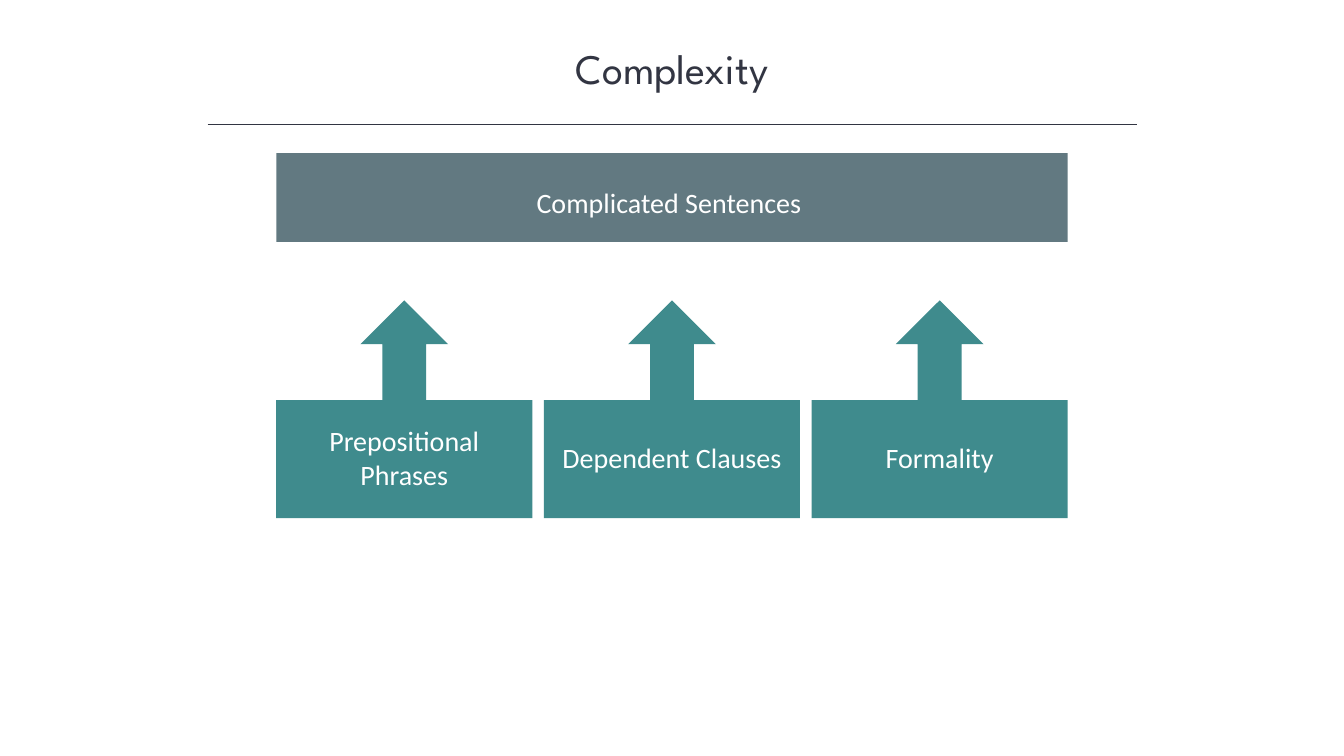
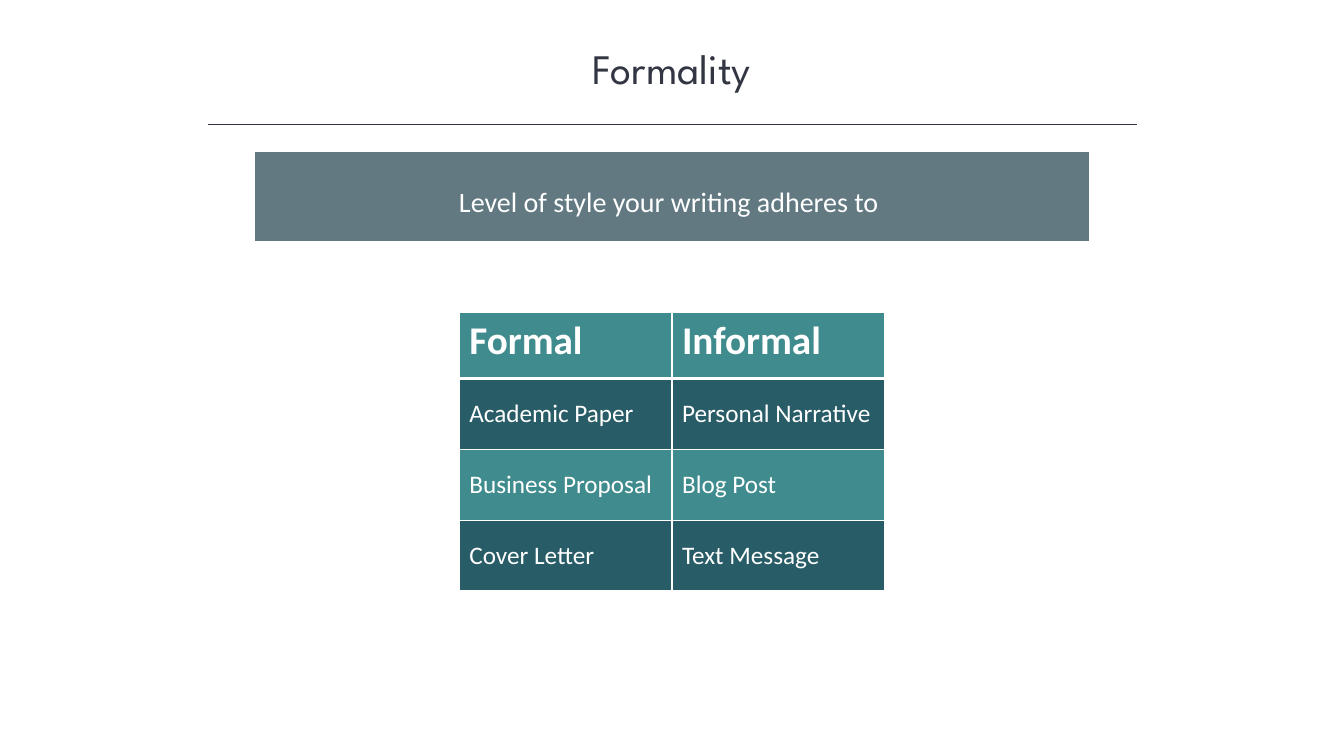
import lxml.etree
import pptx
import pptx.dml.color
import pptx.enum.shapes
import pptx.enum.text
import pptx.oxml.ns
import pptx.util

Inches = pptx.util.Inches
SHAPES = pptx.enum.shapes.MSO_SHAPE
MIDDLE = pptx.enum.text.MSO_ANCHOR.MIDDLE
CENTER = pptx.enum.text.PP_ALIGN.CENTER

SLIDE_WIDTH = 13.33
INK = "323542"
WHITE = "FFFFFF"
SLATE = "627981"
TEAL = "3F8B8D"
DARK_TEAL = "285C66"
TITLE_FONT = "League Spartan"
BODY_FONT = "Calibri"


def color(hex_value):
    """Turn a hex string into a colour."""
    return pptx.dml.color.RGBColor.from_string(hex_value)


def set_margins(target, left, top, right, bottom):
    """Set the inner margins of a text frame or table cell."""
    target.margin_left = Inches(left)
    target.margin_top = Inches(top)
    target.margin_right = Inches(right)
    target.margin_bottom = Inches(bottom)


def write(text_frame, text, size, font=BODY_FONT, hex_value=WHITE, bold=False, align=CENTER):
    """Fill a text frame with one formatted paragraph."""
    text_frame.text = text
    text_frame.word_wrap = True
    paragraph = text_frame.paragraphs[0]
    paragraph.alignment = align
    for run in paragraph.runs:
        run.font.name = font
        run.font.size = pptx.util.Pt(size)
        run.font.bold = bold
        run.font.color.rgb = color(hex_value)


def add_filled_shape(slide, preset, left, top, width, height, fill):
    """Add a preset shape with a flat fill and no outline."""
    shape = slide.shapes.add_shape(
        preset, Inches(left), Inches(top), Inches(width), Inches(height))
    shape.shadow.inherit = False
    shape.fill.solid()
    shape.fill.fore_color.rgb = color(fill)
    shape.line.fill.background()
    return shape


def add_label_box(slide, left, top, width, height, fill, text, margins):
    """Add a filled rectangle with a centred label."""
    shape = add_filled_shape(slide, SHAPES.RECTANGLE, left, top, width, height, fill)
    write(shape.text_frame, text, 20)
    shape.text_frame.vertical_anchor = MIDDLE
    set_margins(shape.text_frame, *margins)


def add_titled_slide(presentation, title_text):
    """Add a slide with a centred title above a thin rule."""
    slide = presentation.slides.add_slide(presentation.slide_layouts[5])
    title = slide.shapes.title
    title.left, title.top = Inches((SLIDE_WIDTH - 10) / 2), Inches(0.37)
    title.width, title.height = Inches(10), Inches(0.61)
    write(title.text_frame, title_text, 30, TITLE_FONT, INK)
    title.text_frame.vertical_anchor = pptx.enum.text.MSO_ANCHOR.TOP
    set_margins(title.text_frame, 0.1, 0.05, 0.1, 0.05)
    rule = slide.shapes.add_connector(
        pptx.enum.shapes.MSO_CONNECTOR.STRAIGHT,
        Inches(2.06), Inches(1.24), Inches(11.28), Inches(1.24))
    rule.line.color.rgb = color(INK)
    rule.line.width = pptx.util.Pt(0.75)
    lxml.etree.SubElement(rule._element.spPr, pptx.oxml.ns.qn("a:effectLst"))
    return slide


def add_banner(slide, top, width, text):
    """Add the slate band centred under the title."""
    left = (SLIDE_WIDTH - width) / 2
    add_label_box(slide, left, top, width, 0.88, SLATE, text, (0.1, 0.1, 0.16, 0))


def add_arrow_cards(slide, left, top, width, labels):
    """Add a row of cards, each with an arrow rising from its top."""
    card_width, card_height = 2.54, 1.17
    arrow_width, arrow_height = 0.87, 1.14
    card_top = top + 0.99
    pitch = (width - card_width) / (len(labels) - 1)
    for index, label in enumerate(labels):
        card_left = left + index * pitch
        add_filled_shape(
            slide, SHAPES.UP_ARROW, card_left + (card_width - arrow_width) / 2, top,
            arrow_width, arrow_height, TEAL)
        add_label_box(
            slide, card_left, card_top, card_width, card_height, TEAL, label,
            (0.13, 0.05, 0.13, 0.08))


def set_cell_borders(cell, hex_value, points):
    """Draw a solid line on all four sides of a table cell."""
    properties = cell._tc.get_or_add_tcPr()
    for index, side in enumerate(("a:lnL", "a:lnR", "a:lnT", "a:lnB")):
        line = lxml.etree.Element(pptx.oxml.ns.qn(side), w=str(pptx.util.Pt(points)))
        fill = lxml.etree.SubElement(line, pptx.oxml.ns.qn("a:solidFill"))
        lxml.etree.SubElement(fill, pptx.oxml.ns.qn("a:srgbClr"), val=hex_value)
        properties.insert(index, line)


def add_tile(slide, left, top, width, height, text, fill, is_header):
    """Add a table of one cell, so that each tile can be moved alone."""
    table = slide.shapes.add_table(
        1, 1, Inches(left), Inches(top), Inches(width), Inches(height)).table
    table.horz_banding = False
    cell = table.cell(0, 0)
    write(cell.text_frame, text, 28 if is_header else 18, bold=is_header,
          align=pptx.enum.text.PP_ALIGN.LEFT)
    if not is_header:
        cell.vertical_anchor = MIDDLE
    set_margins(cell, 0.1, 0.05, 0.1, 0.05)
    cell.fill.solid()
    cell.fill.fore_color.rgb = color(fill)
    set_cell_borders(cell, WHITE, 1)


def add_comparison_tiles(slide, left, top, width, rows):
    """Add a grid of tiles with bold headers and alternating fills."""
    header_height, row_height = 0.65, 0.7
    first_row_top = top + header_height + 0.01
    tile_width = width / len(rows[0])
    for row_index, texts in enumerate(rows):
        is_header = row_index == 0
        tile_top = top if is_header else first_row_top + (row_index - 1) * row_height
        for column_index, text in enumerate(texts):
            add_tile(
                slide, left + column_index * tile_width, tile_top, tile_width,
                header_height if is_header else row_height, text,
                DARK_TEAL if row_index % 2 else TEAL, is_header)


def build_complexity_slide(presentation):
    """Build the slide on what makes sentences complicated."""
    slide = add_titled_slide(presentation, "Complexity")
    width = 7.85
    add_banner(slide, 1.52, width, "Complicated Sentences")
    add_arrow_cards(
        slide, (SLIDE_WIDTH - width) / 2, 2.98, width,
        ("Prepositional Phrases", "Dependent Clauses", "Formality"))


def build_formality_slide(presentation):
    """Build the slide that compares formal and informal writing."""
    slide = add_titled_slide(presentation, "Formality")
    add_banner(slide, 1.51, 8.27, "Level of style your writing adheres to")
    width = 4.22
    add_comparison_tiles(slide, (SLIDE_WIDTH - width) / 2, 3.1, width, (
        ("Formal", "Informal"),
        ("Academic Paper", "Personal Narrative"),
        ("Business Proposal", "Blog Post"),
        ("Cover Letter", "Text Message"),
    ))


def main():
    """Build and save the presentation."""
    presentation = pptx.Presentation()
    presentation.slide_width = Inches(SLIDE_WIDTH)
    presentation.slide_height = Inches(7.5)
    build_complexity_slide(presentation)
    build_formality_slide(presentation)
    presentation.save("out.pptx")


if __name__ == "__main__":
    main()
